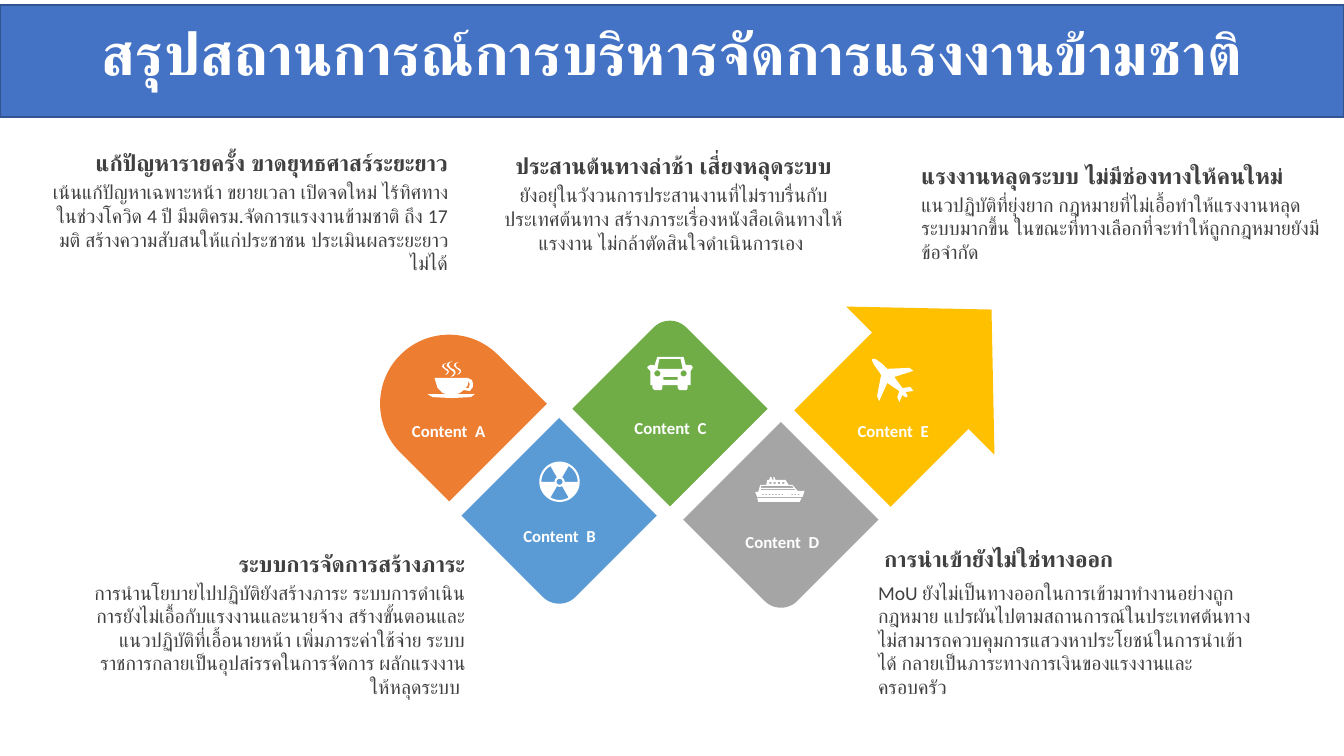
from math import cos, radians, sin

from pptx import Presentation
from pptx.dml.color import RGBColor
from pptx.enum.lang import MSO_LANGUAGE_ID
from pptx.enum.shapes import MSO_SHAPE
from pptx.enum.text import MSO_ANCHOR, PP_ALIGN
from pptx.util import Pt

PX = 9144
FONT = "Calibri"
WHITE = RGBColor(0xFF, 0xFF, 0xFF)
DARK = RGBColor(0x40, 0x40, 0x40)
BANNER = RGBColor(0x44, 0x72, 0xC4)
BANNER_EDGE = RGBColor(0x32, 0x54, 0x91)
ORANGE = RGBColor(0xED, 0x7D, 0x31)
BLUE = RGBColor(0x5B, 0x9B, 0xD5)
GREEN = RGBColor(0x70, 0xAD, 0x47)
GRAY = RGBColor(0xA5, 0xA5, 0xA5)
GOLD = RGBColor(0xFF, 0xC0, 0x00)

TITLE = "สรุปสถานการณ์การบริหารจัดการแรงงานข้ามชาติ"
LEFT, CENTER, RIGHT = PP_ALIGN.LEFT, PP_ALIGN.CENTER, PP_ALIGN.RIGHT

STEPS = [
    (MSO_SHAPE.ROUND_2_SAME_RECTANGLE, (377, 332, 137, 137), 315, ORANGE, (0.5, 0)),
    (MSO_SHAPE.ROUND_1_RECTANGLE, (486, 443, 137, 137), 135, BLUE, ()),
    (MSO_SHAPE.ROUND_1_RECTANGLE, (596, 337, 137, 137), 315, GREEN, ()),
    (MSO_SHAPE.ROUND_1_RECTANGLE, (706, 447, 137, 137), 135, GRAY, ()),
    (MSO_SHAPE.RIGHT_ARROW, (805, 277, 209, 208), 315, GOLD, (0.65, 0.48)),
]
LABELS = [("A", 395, 402), ("B", 505, 507), ("C", 615, 399),
          ("D", 726, 513), ("E", 836, 402)]

NOTES = [
    ("การนำเข้ายังไม่ใช่ทางออก", (867, 530),
     "MoU ยังไม่เป็นทางออกในการเข้ามาทำงานอย่างถูกกฎหมาย แปรผันไปตามสถานการณ์ในประเทศต้นทาง "
     "ไม่สามารถควบคุมการแสวงหาประโยชน์ในการนำเข้าได้ กลายเป็นภาระทางการเงินของแรงงานและครอบครัว",
     (861, 571), 399, 175, LEFT),
    ("ระบบการจัดการสร้างภาระ", (77, 535),
     "การนำนโยบายไปปฏิบัติยังสร้างภาระ ระบบการดำเนินการยังไม่เอื้อกับแรงงานและนายจ้าง "
     "สร้างขั้นตอนและแนวปฏิบัติที่เอื้อนายหน้า เพิ่มภาระค่าใช้จ่าย "
     "ระบบราชการกลายเป็นอุปสiรรคในการจัดการ ผลักแรงงานให้หลุดระบบ ",
     (77, 571), 394, 175, RIGHT),
    ("แก้ปัญหารายครั้ง ขาดยุทธศาสร์ระยะยาว", (31, 137),
     "เน้นแก้ปัญหาเฉพาะหน้า ขยายเวลา เปิดจดใหม่ ไร้ทิศทางในช่วงโควิด 4 ปี "
     "มีมติครม.จัดการแรงงานข้ามชาติ ถึง 17 มติ สร้างความสับสนให้แก่ประชาชน "
     "ประเมินผลระยะยาวไม่ได้",
     (31, 174), 423, 142, RIGHT),
    ("ประสานต้นทางล่าช้า เสี่ยงหลุดระบบ", (479, 140),
     "ยังอยุ่ในวังวนการประสานงานที่ไม่ราบรื่นกับประเทศต้นทาง "
     "สร้างภาระเรื่องหนังสือเดินทางให้แรงงาน ไม่กล้าตัดสินใจดำเนินการเอง ",
     (479, 177), 378, 109, CENTER),
    ("แรงงานหลุดระบบ ไม่มีช่องทางให้คนใหม่", (904, 150),
     "แนวปฏิบัติที่ยุ่งยาก กฎหมายที่ไม่เอื้อทำให้แรงงานหลุดระบบมากขึ้น "
     "ในขณะที่ทางเลือกที่จะทำให้ถูกกฎหมายยังมีข้อจำกัด",
     (904, 186), 418, 109, LEFT),
]

CUP = [(431, 375), (464, 375), (468, 377), (469, 380), (469, 384), (466, 388),
       (460, 387), (456, 390), (453, 391), (471, 391), (467, 394), (448, 395),
       (429, 394), (424, 391), (443, 391), (439, 390), (434, 385)]
CUP_HANDLE = [(464, 378), (464, 382), (462, 385), (465, 385), (466, 381)]
WISP = [(0, 0), (-3, 2), (-4, 4), (-2, 7), (2, 9), (3, 12), (1, 15), (-2, 16),
        (1, 13), (1, 11), (-3, 8), (-6, 5), (-5, 2)]
CAR = [(652, 354), (678, 354), (680, 362), (685, 362), (687, 364), (687, 365),
       (685, 368), (685, 382), (682, 382), (682, 385), (681, 387), (674, 387),
       (672, 385), (672, 382), (657, 382), (657, 385), (656, 387), (649, 387),
       (647, 385), (647, 382), (645, 382), (645, 368), (642, 365), (642, 364),
       (645, 362), (648, 362), (649, 363)]
WINDSHIELD = [(654, 356), (652, 366), (677, 366), (675, 356)]
SHIP = [(767, 473), (768, 473), (769, 476), (779, 476), (782, 481), (786, 481),
        (791, 487), (798, 487), (796, 493), (751, 493), (749, 488), (752, 488),
        (754, 481), (760, 481), (761, 476), (763, 476), (764, 473), (765, 473),
        (766, 476), (767, 476)]
KEEL = [(751, 494), (795, 494), (793, 498), (752, 498)]
DECKS = [[(755, 485), (754, 486), (789, 486), (788, 485)],
         [(755, 482), (755, 484), (787, 484), (786, 482)]]
PLANE = [(906, 388), (898, 389), (900, 392), (900, 394), (898, 394), (895, 392),
         (892, 399), (890, 394), (892, 388), (880, 380), (872, 398), (870, 393),
         (872, 382), (874, 372), (867, 362), (865, 358), (865, 356), (868, 356),
         (875, 361), (880, 366), (902, 365), (906, 368), (887, 374), (895, 385),
         (903, 384)]


def arc(cx, cy, radius, start=0, end=354):
    return [(cx + radius * cos(radians(a)), cy + radius * sin(radians(a)))
            for a in range(start, end + 1, 6)]


def sector(cx, cy, start):
    return arc(cx, cy, 18, start, start + 60) + arc(cx, cy, 5, start, start + 60)[::-1]


def box(x, y, w, h):
    return [(x, y), (x + w, y), (x + w, y + h), (x, y + h)]


def wisp(x, y, scale):
    return [(x + dx * scale, y + dy * scale) for dx, dy in WISP]


def icons():
    cup = [CUP, CUP_HANDLE, wisp(443, 360, 0.75), wisp(449, 358, 1), wisp(455, 359, 0.8)]
    radiation = [arc(555, 478, 20), arc(555, 478, 3)]
    radiation += [sector(555, 478, start) for start in (60, 180, 300)]
    car = [CAR, WINDSHIELD, arc(652, 370.5, 3), arc(678, 370.5, 3), box(658, 374, 14, 3)]
    portholes = [box(756 + 3.2 * i, 490, 1.6, 1) for i in (*range(7), 9, 10, 11)]
    cabins = [box(763 + 4.3 * i, 478, 2, 2) for i in range(4)]
    return [cup, radiation, car, [SHIP, KEEL, *DECKS, *portholes, *cabins], [PLANE]]


def paint(s, fill, line=None):
    s.shadow.inherit = False
    s.fill.solid()
    s.fill.fore_color.rgb = fill
    if line is None:
        s.line.fill.background()
    else:
        s.line.color.rgb = line
        s.line.width = Pt(1)


def add_preset(slide, kind, at, fill, rotation=0, adjustments=(), line=None):
    s = slide.shapes.add_shape(kind, *(v * PX for v in at))
    for i, value in enumerate(adjustments):
        s.adjustments[i] = value
    s.rotation = rotation
    paint(s, fill, line)
    return s


def write(s, text, size, color, align, bold=False, anchor=MSO_ANCHOR.MIDDLE):
    tf = s.text_frame
    tf.word_wrap = True
    tf.vertical_anchor = anchor
    p = tf.paragraphs[0]
    p.text = text
    p.alignment = align
    p.font.name = FONT
    p.font.size = Pt(size)
    p.font.bold = bold
    p.font.color.rgb = color
    p.font.language_id = MSO_LANGUAGE_ID.THAI
    return p


def add_text(slide, at, *args, **kwargs):
    write(slide.shapes.add_textbox(*(v * PX for v in at)), *args, **kwargs)


def add_note(slide, heading, heading_at, body, body_at, width, height, align):
    add_text(slide, (*heading_at, width, 48), heading, 16, DARK, align, bold=True)
    add_text(slide, (*body_at, width, height), body, 14, DARK, align, anchor=MSO_ANCHOR.TOP)


def add_icon(slide, outlines):
    builder = None
    for outline in outlines:
        points = [(round(x * PX), round(y * PX)) for x, y in outline]
        if builder is None:
            builder = slide.shapes.build_freeform(*points[0])
        else:
            builder.move_to(*points[0])
        builder.add_line_segments(points[1:], close=True)
    paint(builder.convert_to_shape(), WHITE)


def main():
    prs = Presentation()
    prs.slide_width, prs.slide_height = 1333 * PX, 750 * PX
    slide = prs.slides.add_slide(prs.slide_layouts[6])
    banner = add_preset(slide, MSO_SHAPE.RECTANGLE, (0, 5, 1333, 111), BANNER, line=BANNER_EDGE)
    p = write(banner, TITLE, 41.9, WHITE, CENTER, bold=True)
    p.line_spacing = 0.7
    p.space_before = Pt(10)
    for kind, at, rotation, fill, adjustments in STEPS:
        add_preset(slide, kind, at, fill, rotation, adjustments)
    for note in NOTES:
        add_note(slide, *note)
    for letter, x, y in LABELS:
        add_text(slide, (x, y, 100, 50), f"Content  {letter}", 12, WHITE, CENTER, bold=True)
    for outlines in icons():
        add_icon(slide, outlines)
    prs.save("out.pptx")


if __name__ == "__main__":
    main()
